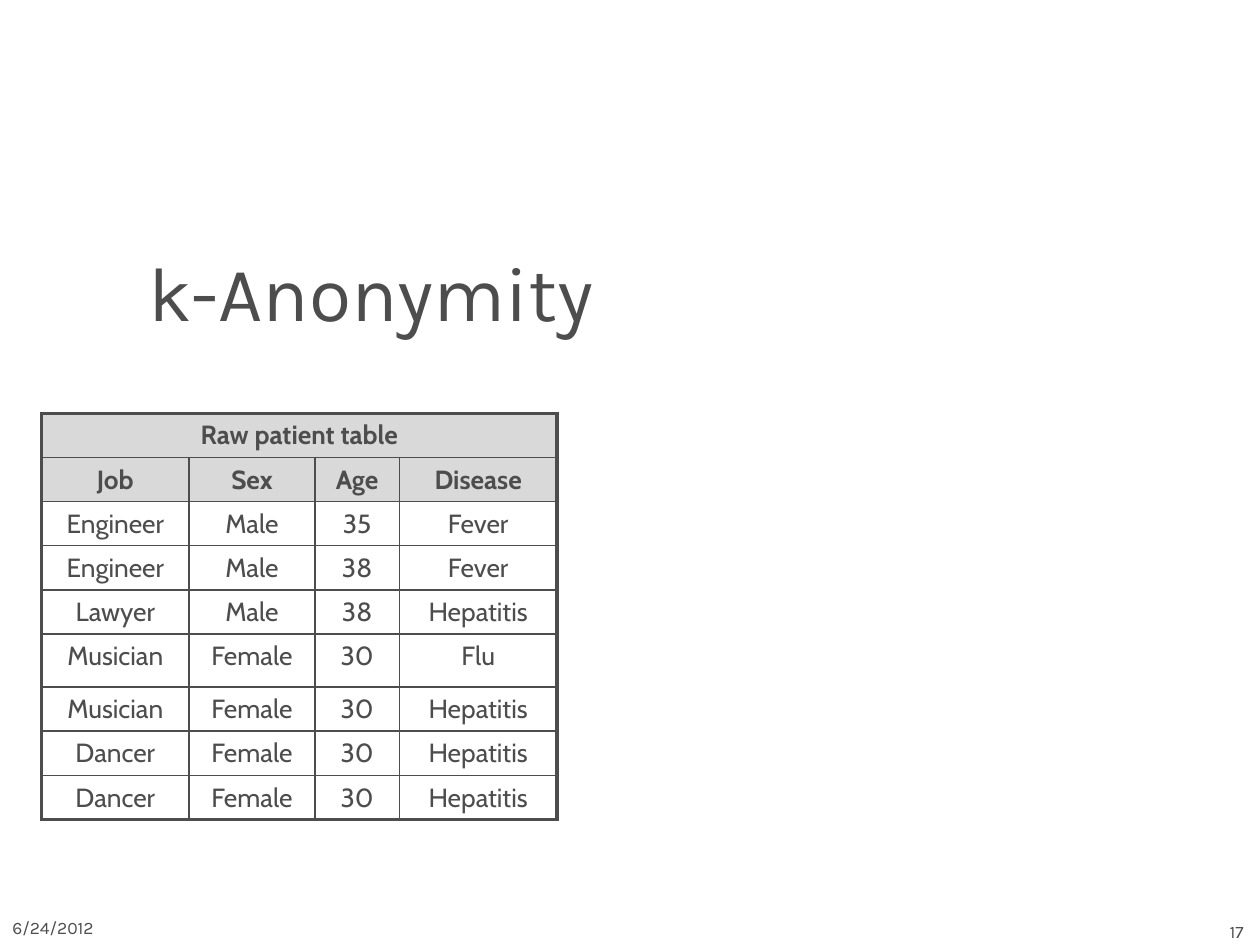
from lxml.etree import SubElement
from pptx import Presentation
from pptx.dml.color import RGBColor
from pptx.enum.text import MSO_ANCHOR as Anchor, PP_ALIGN as Align
from pptx.oxml.ns import qn
from pptx.util import Cm, Pt

COLORS = {"ink": "4D4D4D", "header": "D9D9D9"}
COLUMN_WIDTHS = [2.97, 2.54, 1.7, 3.18]
ROW_HEIGHT = 0.89
TALL_ROW, TALL_HEIGHT = 5, 1.07
THIN, THICK = 1, 2.25
PATIENTS = [
    ["Raw patient table", "", "", ""],
    ["Job", "Sex", "Age", "Disease"],
    ["Engineer", "Male", "35", "Fever"],
    ["Engineer", "Male", "38", "Fever"],
    ["Lawyer", "Male", "38", "Hepatitis"],
    ["Musician", "Female", "30", "Flu"],
    ["Musician", "Female", "30", "Hepatitis"],
    ["Dancer", "Female", "30", "Hepatitis"],
    ["Dancer", "Female", "30", "Hepatitis"],
]


def write_text(frame, text, size=10, font="Karla", bold=False, align=Align.LEFT):
    para = frame.paragraphs[0]
    para.alignment = align
    span = para.add_run()
    span.text = text
    span.font.size = Pt(size)
    span.font.name = font
    span.font.bold = bold
    span.font.color.rgb = RGBColor.from_string(COLORS["ink"])


def add_text(page, text, left, top, width, height, anchor=Anchor.TOP, **style):
    box = page.shapes.add_textbox(Cm(left), Cm(top), Cm(width), Cm(height))
    box.text_frame.word_wrap = True
    box.text_frame.vertical_anchor = anchor
    write_text(box.text_frame, text, **style)


def set_borders(cell, **widths):
    """Draw cell borders; widths are points keyed by side: L, R, T, B."""
    properties = cell._tc.get_or_add_tcPr()
    for side, width in widths.items():
        line = SubElement(properties, qn(f"a:ln{side}"), w=str(Pt(width)))
        fill = SubElement(line, qn("a:solidFill"))
        SubElement(fill, qn("a:srgbClr"), val=COLORS["ink"])


def fill_cell(cell, is_header):
    if is_header:
        cell.fill.solid()
        cell.fill.fore_color.rgb = RGBColor.from_string(COLORS["header"])
    else:
        cell.fill.background()


def add_patient_table(page, left, top):
    row_count, column_count = len(PATIENTS), len(COLUMN_WIDTHS)
    heights = [ROW_HEIGHT] * row_count
    heights[TALL_ROW] = TALL_HEIGHT
    table = page.shapes.add_table(
        row_count, column_count, Cm(left), Cm(top),
        Cm(sum(COLUMN_WIDTHS)), Cm(sum(heights)),
    ).table
    for column, width in zip(table.columns, COLUMN_WIDTHS):
        column.width = Cm(width)
    for row, height in zip(table.rows, heights):
        row.height = Cm(height)
    table.cell(0, 0).merge(table.cell(0, column_count - 1))

    for r, values in enumerate(PATIENTS):
        for c, value in enumerate(values):
            cell = table.cell(r, c)
            set_borders(
                cell,
                L=THICK if c == 0 else THIN,
                R=THICK if r == 0 or c == column_count - 1 else THIN,
                T=THICK if r == 0 else THIN,
                B=THICK if r == row_count - 1 else THIN,
            )
            fill_cell(cell, is_header=r < 2)
            if value:
                write_text(cell.text_frame, value, size=15, font="Cabin",
                           bold=r < 2, align=Align.CENTER)


def main():
    deck = Presentation()
    deck.slide_width, deck.slide_height = Cm(25.4), Cm(19.05)
    page = deck.slides.add_slide(deck.slide_layouts[6])
    add_text(page, "17", 23.72, 18.44, 1.6, 0.69, align=Align.RIGHT)
    add_text(page, "6/24/2012", 0, 18.36, 2.69, 0.69)
    add_text(page, "k-Anonymity", 2.74, 4.88, 20.32, 1.98,
             anchor=Anchor.MIDDLE, size=44)
    add_patient_table(page, 0.84, 8.33)
    deck.save("out.pptx")


if __name__ == "__main__":
    main()
